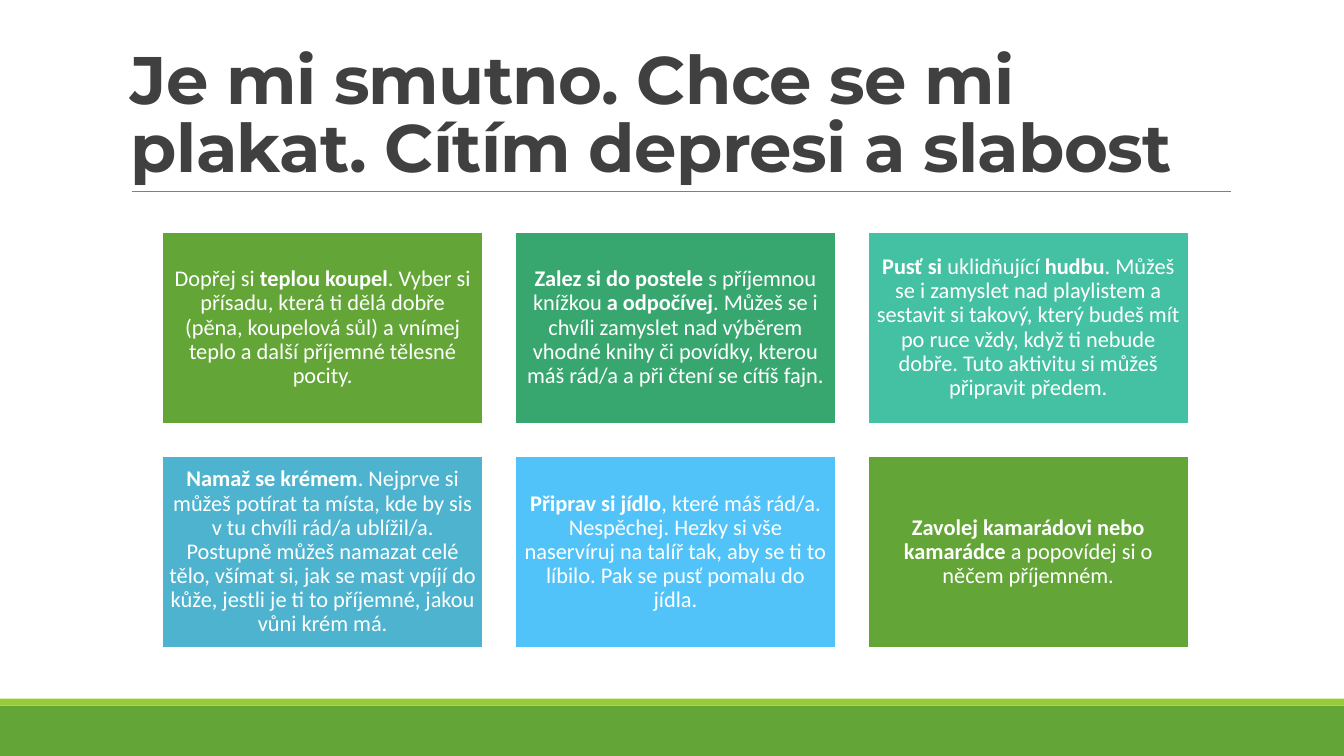
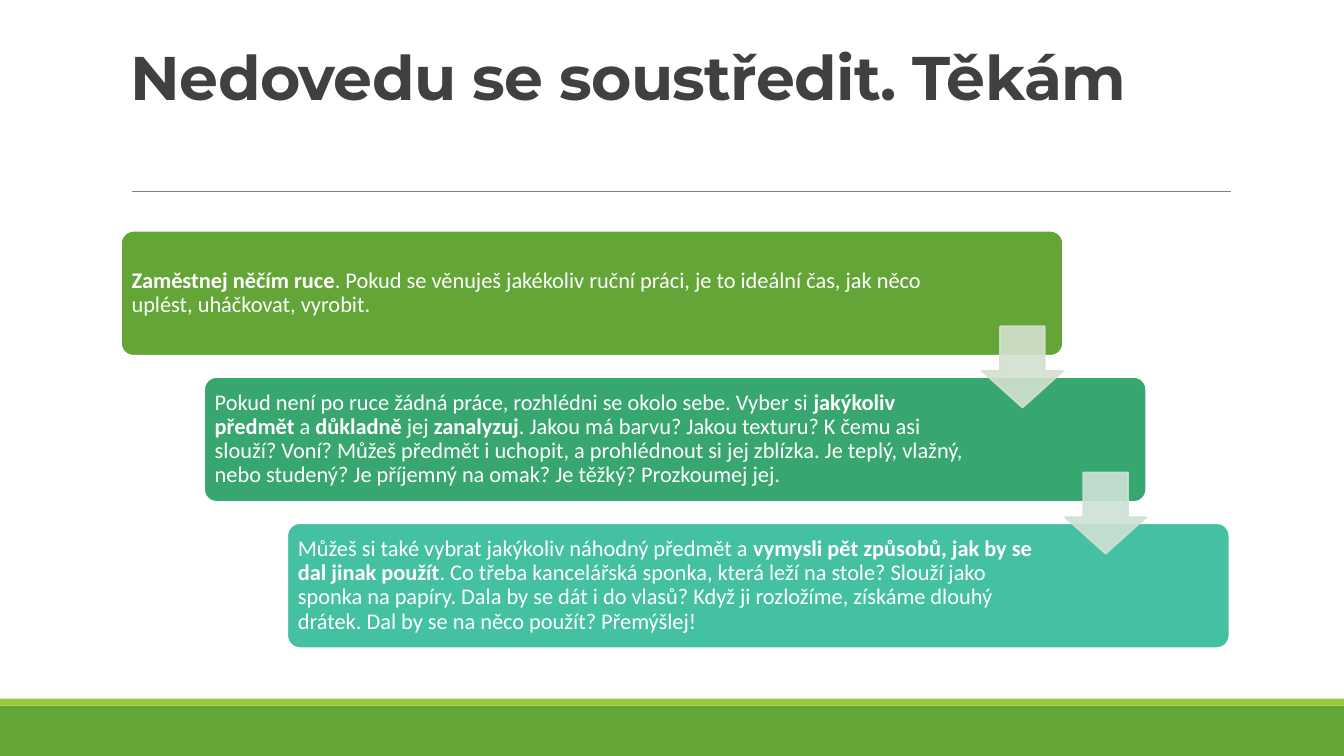
from lxml.etree import SubElement
from pptx import Presentation
from pptx.dml.color import RGBColor
from pptx.enum.shapes import MSO_CONNECTOR, MSO_SHAPE
from pptx.enum.text import MSO_ANCHOR, PP_ALIGN
from pptx.oxml.ns import qn
from pptx.util import Pt

WHITE = RGBColor(0xFF, 0xFF, 0xFF)
TITLE_GRAY = RGBColor(0x40, 0x40, 0x40)
RULE_GRAY = RGBColor(0x80, 0x80, 0x80)
GREEN = RGBColor(0x63, 0xA5, 0x37)
LIME = RGBColor(0x99, 0xCB, 0x38)
EMERALD = RGBColor(0x37, 0xA7, 0x6F)
TEAL = RGBColor(0x44, 0xC1, 0xA3)
STEEL_BLUE = RGBColor(0x4E, 0xB3, 0xCF)
SKY_BLUE = RGBColor(0x51, 0xC3, 0xF9)
ARROW_COLORS = [RGBColor(0xD3, 0xE1, 0xCE), RGBColor(0xCE, 0xE1, 0xD5)]

SLIDE_WIDTH, SLIDE_HEIGHT = 960, 540
TITLE_BOX = (86.4, 22.3, 792, 114.5)
CARD_AREA = (116, 165.6, 733, 297.4)
STEP_AREA = (86.4, 164.9, 791.8, 298.1)

TITLE_FONT = {"name": "Montserrat", "bold": True}
BODY_FONT = {"name": "Calibri", "size": Pt(16)}
BODY_FRAME = {
    "word_wrap": True,
    "vertical_anchor": MSO_ANCHOR.MIDDLE,
    "margin_left": Pt(5),
    "margin_right": Pt(5),
    "margin_top": Pt(5),
    "margin_bottom": Pt(5),
}

# Bold passages stand between double asterisks.
CARDS = [
    (GREEN, "Dopřej si **teplou koupel**. Vyber si přísadu, která ti dělá dobře "
            "(pěna, koupelová sůl) a vnímej teplo a další příjemné tělesné pocity."),
    (EMERALD, "**Zalez si do postele** s příjemnou knížkou **a odpočívej**. Můžeš se i "
              "chvíli zamyslet nad výběrem vhodné knihy či povídky, kterou máš rád/a "
              "a při čtení se cítíš fajn."),
    (TEAL, "**Pusť si** uklidňující **hudbu**. Můžeš se i zamyslet nad playlistem a "
           "sestavit si takový, který budeš mít po ruce vždy, když ti nebude dobře. "
           "Tuto aktivitu si můžeš připravit předem."),
    (STEEL_BLUE, "**Namaž se krémem**. Nejprve si můžeš potírat ta místa, kde by sis v tu "
                 "chvíli rád/a ublížil/a. Postupně můžeš namazat celé tělo, všímat si, jak "
                 "se mast vpíjí do kůže, jestli je ti to příjemné, jakou vůni krém má."),
    (SKY_BLUE, "**Připrav si jídlo**, které máš rád/a. Nespěchej. Hezky si vše naservíruj "
               "na talíř tak, aby se ti to líbilo. Pak se pusť pomalu do jídla."),
    (GREEN, "**Zavolej kamarádovi nebo kamarádce** a popovídej si o něčem příjemném."),
]
# Colour, right text margin, text
STEPS = [
    (GREEN, 96, "**Zaměstnej něčím ruce**. Pokud se věnuješ jakékoliv ruční práci, je to "
                "ideální čas, jak něco uplést, uháčkovat, vyrobit."),
    (EMERALD, 122, "Pokud není po ruce žádná práce, rozhlédni se okolo sebe. Vyber si "
                   "**jakýkoliv předmět** a **důkladně** jej **zanalyzuj**. Jakou má barvu? "
                   "Jakou texturu? K čemu asi slouží? Voní? Můžeš předmět i uchopit, a "
                   "prohlédnout si jej zblízka. Je teplý, vlažný, nebo studený? Je příjemný "
                   "na omak? Je těžký? Prozkoumej jej."),
    (TEAL, 122, "Můžeš si také vybrat jakýkoliv náhodný předmět a **vymysli pět způsobů, jak "
                "by se dal jinak použít**. Co třeba kancelářská sponka, která leží na stole? "
                "Slouží jako sponka na papíry. Dala by se dát i do vlasů? Když ji rozložíme, "
                "získáme dlouhý drátek. Dal by se na něco použít? Přemýšlej!"),
]


def apply_format(target, values):
    for name, value in values.items():
        setattr(target, name, value)


def add_block(slide, kind, box, color, outline=None):
    """Add a flat preset shape; without an outline colour it has no line."""
    shape = slide.shapes.add_shape(kind, *map(Pt, box))
    shape.shadow.inherit = False
    shape.fill.solid()
    shape.fill.fore_color.rgb = color
    if outline is None:
        shape.line.fill.background()
    else:
        shape.line.color.rgb = outline
        shape.line.width = Pt(1.25)
    return shape


def write_body(shape, text, alignment, **frame_values):
    frame = shape.text_frame
    apply_format(frame, BODY_FRAME | frame_values)
    paragraph = frame.paragraphs[0]
    apply_format(paragraph, {"alignment": alignment, "line_spacing": 0.9})
    for index, part in enumerate(text.split("**")):
        if part:
            run = paragraph.add_run()
            run.text = part
            apply_format(run.font, BODY_FONT | {"bold": index % 2 == 1})
            run.font.color.rgb = WHITE


def add_title(slide, box, text, size, bottom_margin):
    frame = slide.shapes.add_textbox(*map(Pt, box)).text_frame
    apply_format(frame, {
        "word_wrap": True,
        "vertical_anchor": MSO_ANCHOR.BOTTOM,
        "margin_bottom": Pt(bottom_margin),
    })
    paragraph = frame.paragraphs[0]
    paragraph.line_spacing = 0.85
    run = paragraph.add_run()
    run.text = text
    apply_format(run.font, TITLE_FONT | {"size": Pt(size)})
    run.font.color.rgb = TITLE_GRAY
    run.font._element.set("spc", "-50")


def add_base_slide(presentation, title, title_size, title_bottom_margin=3.6):
    """Add a slide with the footer bands, the title and the rule below it."""
    slide = presentation.slides.add_slide(presentation.slide_layouts[6])
    for top, height, color in [(504, 36, GREEN), (499, 5, LIME)]:
        add_block(slide, MSO_SHAPE.RECTANGLE, (0, top, SLIDE_WIDTH, height), color)
    rule = slide.shapes.add_connector(
        MSO_CONNECTOR.STRAIGHT, Pt(94.3), Pt(136.8), Pt(879), Pt(136.8))
    rule.line.color.rgb = RULE_GRAY
    rule.line.width = Pt(0.5)
    SubElement(rule._element.spPr, qn("a:effectLst"))
    add_title(slide, TITLE_BOX, title, title_size, title_bottom_margin)
    return slide


def add_card_grid(slide, box, cards, columns=3, gap=23):
    left, top, width, height = box
    rows = -(-len(cards) // columns)
    card_width = (width - gap * (columns - 1)) / columns
    card_height = (height - gap * (rows - 1)) / rows
    for index, (color, text) in enumerate(cards):
        row, column = divmod(index, columns)
        card_box = (left + column * (card_width + gap), top + row * (card_height + gap),
                    card_width, card_height)
        card = add_block(slide, MSO_SHAPE.RECTANGLE, card_box, color, WHITE)
        write_body(card, text, PP_ALIGN.CENTER)


def add_step_arrow(slide, box, color):
    arrow = add_block(slide, MSO_SHAPE.DOWN_ARROW, box, color, color)
    arrow.adjustments[0] = 0.55
    arrow.adjustments[1] = 0.45
    for color_element in arrow._element.spPr.iter(qn("a:srgbClr")):
        SubElement(color_element, qn("a:alpha"), val="90000")


def add_staircase(slide, box, steps, arrow_colors, indent=59.4, gap=15.1):
    """Place steps shifted to the right, with an arrow across each gap."""
    left, top, width, height = box
    last = len(steps) - 1
    step_width = width - indent * last
    step_height = (height - gap * last) / len(steps)
    step_boxes = [(left + index * indent, top + index * (step_height + gap),
                   step_width, step_height) for index in range(len(steps))]
    for step_box, (color, right_margin, text) in zip(step_boxes, steps):
        step = add_block(slide, MSO_SHAPE.ROUNDED_RECTANGLE, step_box, color, WHITE)
        step.adjustments[0] = 0.1
        write_body(step, text, PP_ALIGN.LEFT, margin_right=Pt(right_margin))
    arrow_size = 0.65 * step_height
    for (step_left, step_top, _, _), color in zip(step_boxes, arrow_colors):
        arrow_box = (step_left + step_width - arrow_size, step_top + 68.2,
                     arrow_size, arrow_size)
        add_step_arrow(slide, arrow_box, color)


def main():
    presentation = Presentation()
    presentation.slide_width = Pt(SLIDE_WIDTH)
    presentation.slide_height = Pt(SLIDE_HEIGHT)

    sadness_slide = add_base_slide(
        presentation, "Je mi smutno. Chce se mi plakat. Cítím depresi a slabost", 48)
    add_card_grid(sadness_slide, CARD_AREA, CARDS)

    focus_slide = add_base_slide(presentation, "Nedovedu se soustředit. Těkám", 44, 56)
    add_staircase(focus_slide, STEP_AREA, STEPS, ARROW_COLORS)

    presentation.save("out.pptx")


if __name__ == "__main__":
    main()
